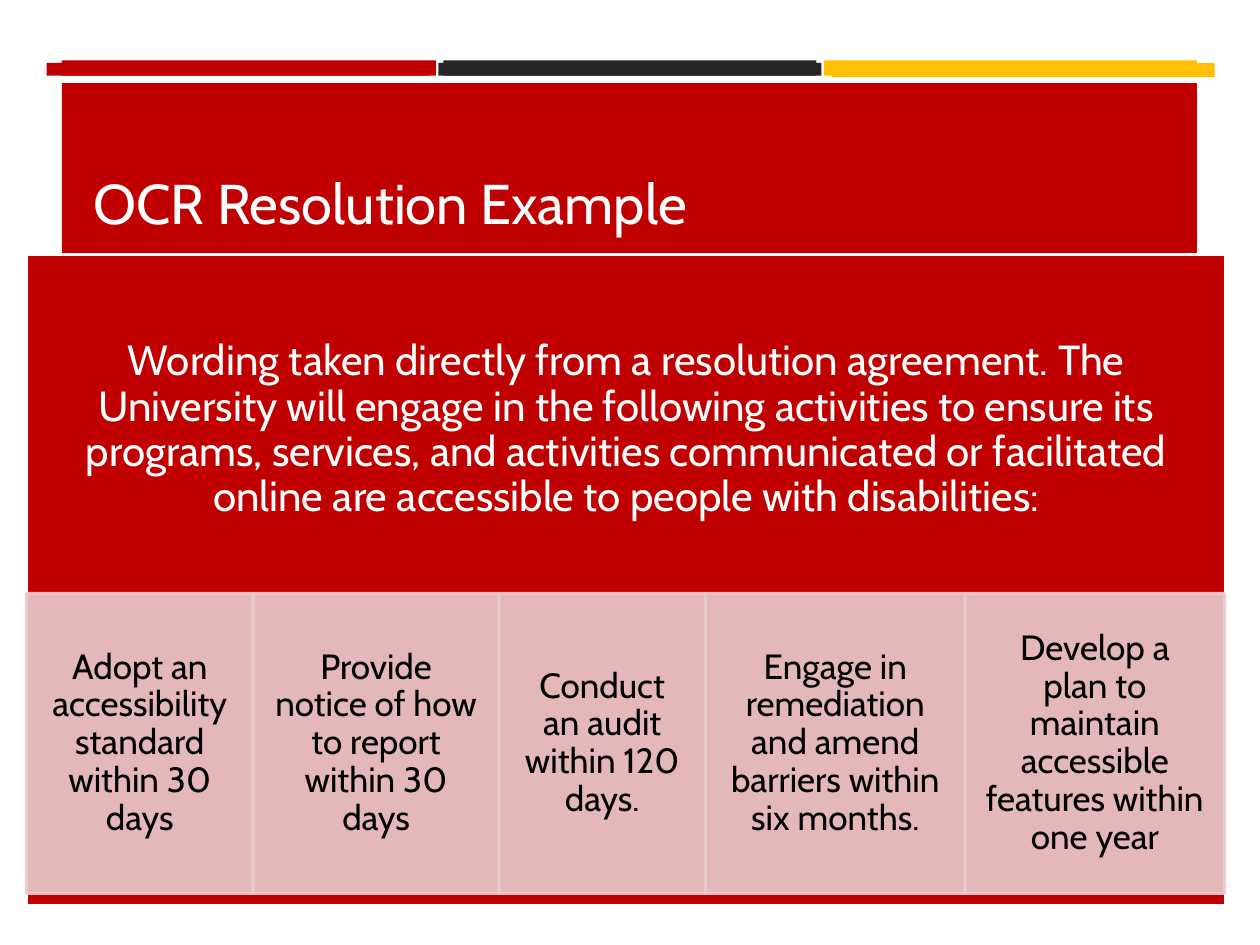
"""Build the OCR resolution slide: a title band, a red panel and five action cells."""
from dataclasses import dataclass
from typing import Optional

from lxml import etree
from pptx import Presentation
from pptx.dml.color import RGBColor
from pptx.enum.shapes import MSO_SHAPE
from pptx.enum.text import MSO_ANCHOR, MSO_AUTO_SIZE, PP_ALIGN
from pptx.oxml.ns import qn
from pptx.shapes.autoshape import Shape
from pptx.slide import Slide
from pptx.text.text import TextFrame
from pptx.util import Inches, Pt

RECT = MSO_SHAPE.RECTANGLE
MIDDLE, BOTTOM = MSO_ANCHOR.MIDDLE, MSO_ANCHOR.BOTTOM
LEFT, CENTER = PP_ALIGN.LEFT, PP_ALIGN.CENTER
NO_FIT = MSO_AUTO_SIZE.NONE

RED = RGBColor(0xC0, 0x00, 0x00)
GOLD = RGBColor(0xFF, 0xC0, 0x00)
DARK = RGBColor(0x26, 0x26, 0x26)
PINK = RGBColor(0xE8, 0xCC, 0xCC)
WHITE = RGBColor(0xFF, 0xFF, 0xFF)
BLACK = RGBColor(0x00, 0x00, 0x00)

FONT = "Cabin"
TITLE = "OCR Resolution Example"
INTRO = (
    "Wording taken directly from a resolution agreement. The University will "
    "engage in the following activities to ensure its programs, services, and "
    "activities communicated or facilitated online are accessible to people "
    "with disabilities:"
)
EDGE, CELL_TOP, CELL_TALL = 0.21, 4.71, 2.38


@dataclass(frozen=True)
class Box:
    left: float
    top: float
    width: float
    height: float
    fill: Optional[RGBColor] = None
    line: Optional[RGBColor] = None


@dataclass(frozen=True)
class Step:
    width: float
    text: str


BANDS = [
    Box(0.49, 0.48, 2.97, 0.12, RED),
    Box(6.54, 0.48, 2.96, 0.12, GOLD),
    Box(3.52, 0.48, 2.96, 0.12, DARK),
    Box(0.49, 0.66, 9.01, 1.38, RED),
    Box(0.37, 0.5, 3.04, 0.1, RED),
    Box(6.6, 0.5, 3.04, 0.11, GOLD),
    Box(3.48, 0.5, 3.04, 0.1, DARK),
]
PANEL = Box(EDGE, 2.02, 9.52, 5.17, RED, WHITE)
HEAD = Box(EDGE, 2.02, 9.52, 2.79)
STEPS = [
    Step(1.8, "Adopt an accessibility standard within 30 days"),
    Step(1.95, "Provide notice of how to report within 30 days"),
    Step(1.64, "Conduct an audit within 120 days."),
    Step(2.06, "Engage in remediation and amend barriers within six months."),
    Step(2.06, "Develop a plan to maintain accessible features within one year"),
]


def add_box(slide: Slide, box: Box) -> Shape:
    shape = slide.shapes.add_shape(
        RECT, Inches(box.left), Inches(box.top), Inches(box.width), Inches(box.height)
    )
    shape.shadow.inherit = False
    if box.fill is None:
        shape.fill.background()
    else:
        shape.fill.solid()
        shape.fill.fore_color.rgb = box.fill
    if box.line is None:
        shape.line.fill.background()
    else:
        shape.line.color.rgb = box.line
        shape.line.width = Pt(1.75)
    return shape


def fade(shape: Shape, percent: int) -> None:
    for color in shape.element.spPr.iter(qn("a:srgbClr")):
        etree.SubElement(color, qn("a:alpha"), val=str(percent * 1000))


def write(frame: TextFrame, text: str, size: int, color: RGBColor,
          anchor: MSO_ANCHOR = MIDDLE, align: PP_ALIGN = CENTER) -> None:
    frame.text = text
    frame.word_wrap = True
    frame.auto_size = NO_FIT
    frame.vertical_anchor = anchor
    para = frame.paragraphs[0]
    para.alignment = align
    para.line_spacing = 0.9
    font = para.runs[0].font
    font.name, font.size, font.color.rgb = FONT, Pt(size), color


def pad(frame: TextFrame, side: float, end: float) -> None:
    frame.margin_left = frame.margin_right = Inches(side)
    frame.margin_top = frame.margin_bottom = Inches(end)


def add_title(slide: Slide) -> None:
    title = slide.shapes.title
    title.left, title.top = Inches(0.64), Inches(0.75)
    title.width, title.height = Inches(8.74), Inches(1.18)
    write(title.text_frame, TITLE, 32, WHITE, BOTTOM, LEFT)
    title.element.getparent().append(title.element)


def add_steps(slide: Slide) -> None:
    left = EDGE
    for step in STEPS:
        cell = add_box(slide, Box(left, CELL_TOP, step.width, CELL_TALL, PINK, PINK))
        fade(cell, 90)
        pad(cell.text_frame, 0.16, 0.03)
        write(cell.text_frame, step.text, 20, BLACK)
        left += step.width


def main() -> None:
    deck = Presentation()
    deck.slide_width, deck.slide_height = Inches(10), Inches(7.5)
    slide = deck.slides.add_slide(deck.slide_layouts[5])
    for band in BANDS:
        add_box(slide, band)
    add_title(slide)
    add_box(slide, PANEL)
    head = add_box(slide, HEAD)
    pad(head.text_frame, 0.19, 0.19)
    write(head.text_frame, INTRO, 24, WHITE)
    add_steps(slide)
    deck.save("out.pptx")


if __name__ == "__main__":
    main()
